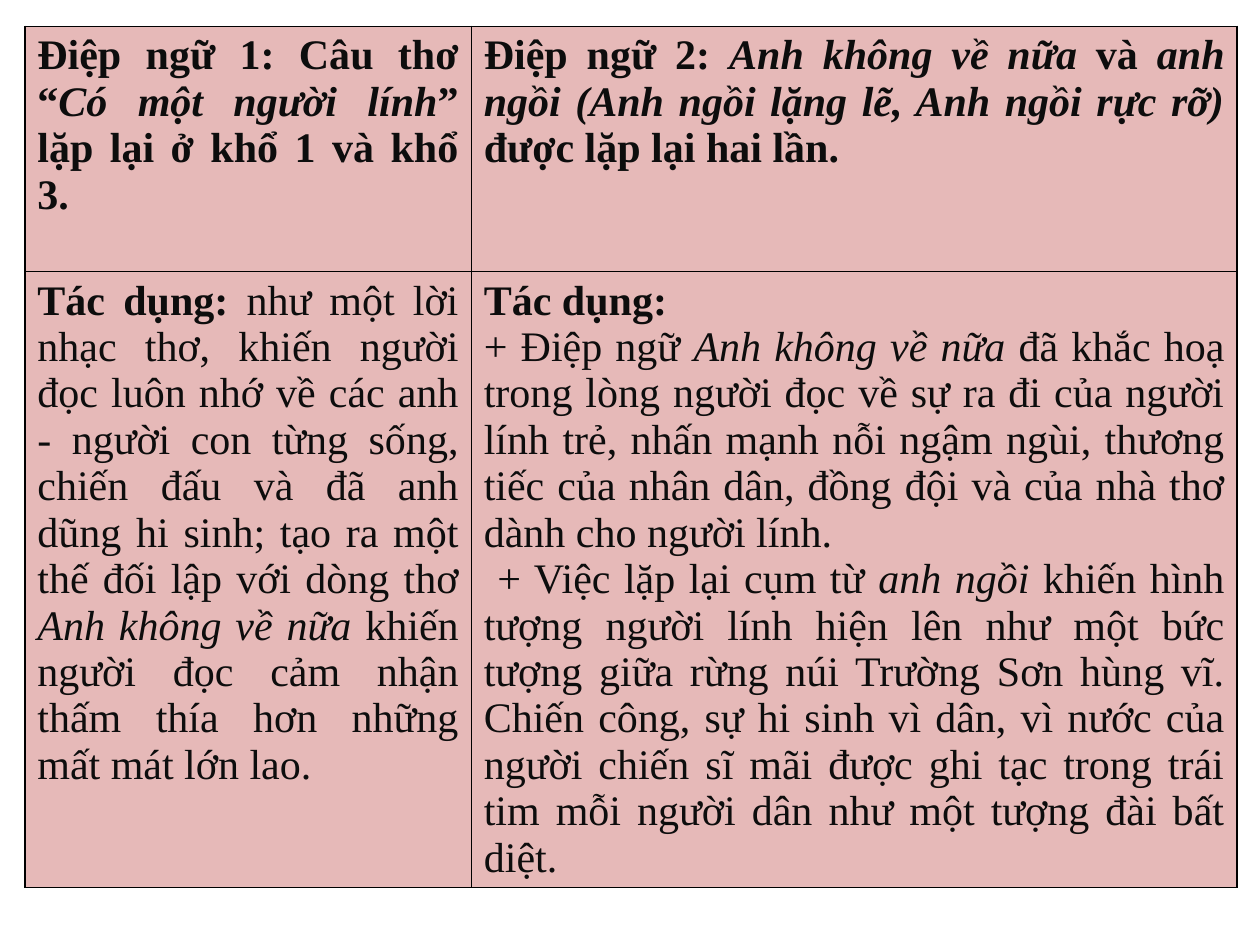
from lxml.etree import SubElement
from pptx import Presentation
from pptx.dml.color import RGBColor
from pptx.enum.text import PP_ALIGN
from pptx.oxml.ns import qn
from pptx.util import Cm, Pt

PINK = RGBColor(0xE6, 0xB9, 0xB8)
INK = RGBColor(0x0D, 0x0D, 0x0D)
BLACK = RGBColor(0x00, 0x00, 0x00)

PLAIN = {"bold": False, "italic": False}
ITALIC = {"bold": False, "italic": True}
BOLD = {"bold": True, "italic": False}
BOLD_ITALIC = {"bold": True, "italic": True}
BASE = {"name": "Times New Roman", "size": Pt(24)}

COLUMN_WIDTHS = [Cm(9), Cm(15.44)]
ROW_HEIGHTS = [Cm(4.94), Cm(12.42)]

# Rows > cells > paragraphs > (text, format) runs
CONTENT = [
    [
        [[("Điệp ngữ 1: Câu thơ “", BOLD),
          ("Có một người lính", BOLD_ITALIC),
          ("” lặp lại ở khổ 1 và khổ 3.", BOLD)]],
        [[("Điệp ngữ 2: ", BOLD),
          ("Anh không về nữa", BOLD_ITALIC),
          (" và ", BOLD),
          ("anh ngồi (Anh ngồi lặng lẽ, Anh ngồi rực rỡ)", BOLD_ITALIC),
          (" được lặp lại hai lần.", BOLD)]],
    ],
    [
        [[("Tác dụng:", BOLD),
          (" như một lời nhạc thơ, khiến người đọc luôn nhớ về các anh - người con "
           "từng sống, chiến đấu và đã anh dũng hi sinh; tạo ra một thế đối lập với "
           "dòng thơ ", PLAIN),
          ("Anh không về nữa", ITALIC),
          (" khiến người đọc cảm nhận thấm thía hơn những mất mát lớn lao.", PLAIN)]],
        [[("Tác dụng:", BOLD)],
         [("+ Điệp ngữ ", PLAIN),
          ("Anh không về nữa", ITALIC),
          (" đã khắc hoạ trong lòng người đọc về sự ra đi của người lính trẻ, nhấn "
           "mạnh nỗi ngậm ngùi, thương tiếc của nhân dân, đồng đội và của nhà thơ "
           "dành cho người lính.", PLAIN)],
         [(" + Việc lặp lại cụm từ ", PLAIN),
          ("anh ngồi", ITALIC),
          (" khiến hình tượng người lính hiện lên như một bức tượng giữa rừng núi "
           "Trường Sơn hùng vĩ. Chiến công, sự hi sinh vì dân, vì nước của người "
           "chiến sĩ mãi được ghi tạc trong trái tim mỗi người dân như một tượng đài "
           "bất diệt.", PLAIN)]],
    ],
]


def add_borders(cell):
    properties = cell._tc.get_or_add_tcPr()
    for side in ("lnL", "lnR", "lnT", "lnB"):
        line = SubElement(properties, qn(f"a:{side}"), w=str(Pt(1)))
        fill = SubElement(line, qn("a:solidFill"))
        SubElement(fill, qn("a:srgbClr"), val=str(BLACK))


# Slide
presentation = Presentation()
presentation.slide_width = Cm(25.4)
presentation.slide_height = Cm(19.05)
slide = presentation.slides.add_slide(presentation.slide_layouts[6])

# Table grid
table = slide.shapes.add_table(
    len(ROW_HEIGHTS), len(COLUMN_WIDTHS), Cm(0.5), Cm(0.53),
    sum(COLUMN_WIDTHS), sum(ROW_HEIGHTS)).table
for column, width in zip(table.columns, COLUMN_WIDTHS):
    column.width = width
for row, height in zip(table.rows, ROW_HEIGHTS):
    row.height = height

# Cells: borders, fill and justified text
for row, row_content in zip(table.rows, CONTENT):
    for cell, paragraphs in zip(row.cells, row_content):
        add_borders(cell)
        cell.fill.solid()
        cell.fill.fore_color.rgb = PINK
        text_frame = cell.text_frame
        for index, runs in enumerate(paragraphs):
            paragraph = text_frame.add_paragraph() if index else text_frame.paragraphs[0]
            paragraph.alignment = PP_ALIGN.JUSTIFY
            for text, style in runs:
                run = paragraph.add_run()
                run.text = text
                run.font.color.rgb = INK
                for attribute, value in {**BASE, **style}.items():
                    setattr(run.font, attribute, value)

presentation.save("out.pptx")
